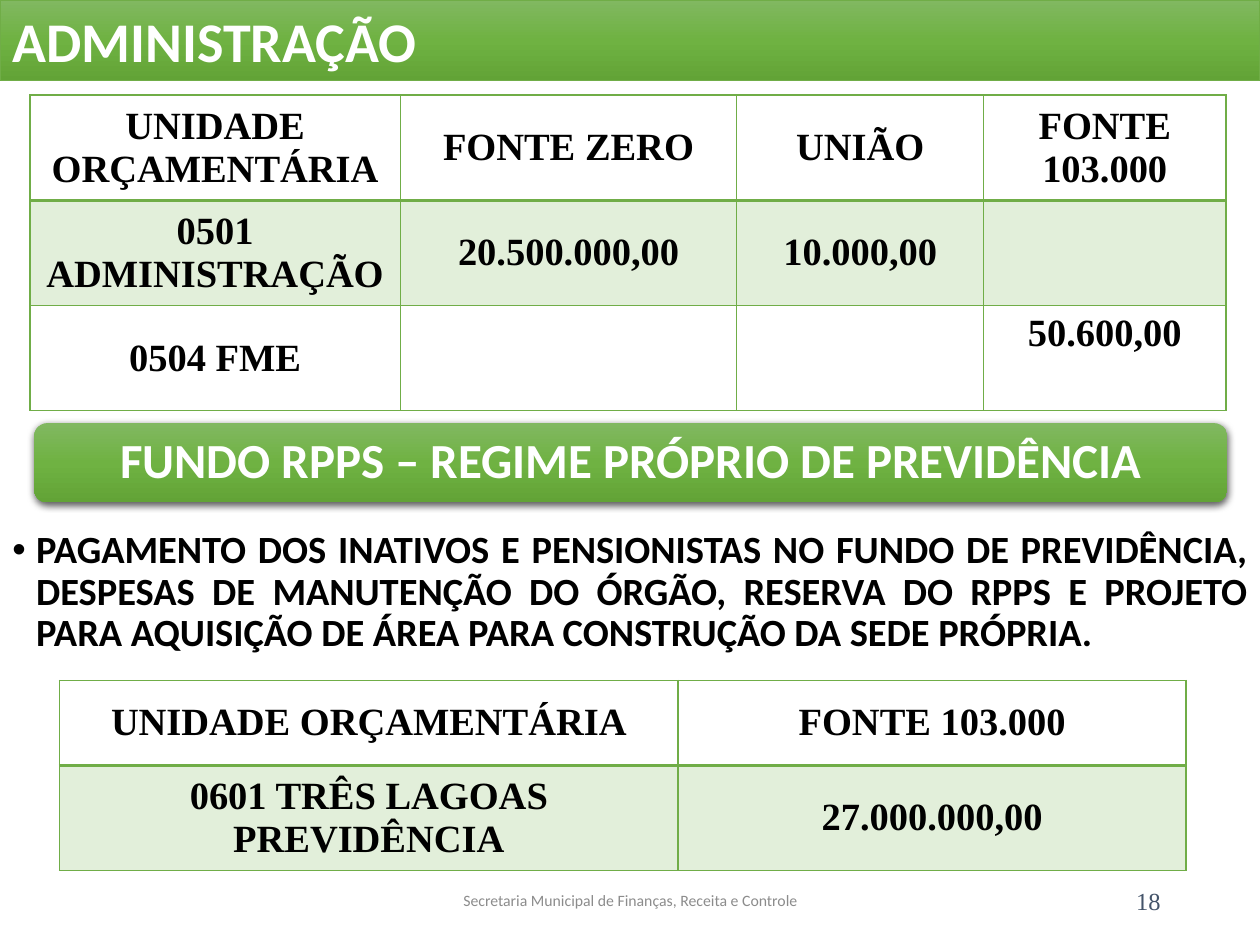
from copy import deepcopy
from dataclasses import dataclass

from lxml.etree import SubElement
from pptx import Presentation
from pptx.dml.color import RGBColor as Rgb
from pptx.enum.shapes import MSO_SHAPE as Kind
from pptx.enum.text import MSO_ANCHOR as Anchor, PP_ALIGN as Align
from pptx.oxml import parse_xml
from pptx.oxml.ns import nsdecls, qn
from pptx.util import Cm, Pt

HUES = {
    "green": "70AD47", "pale": "E2EFDA", "white": "FFFFFF",
    "black": "000000", "gray": "8C8C8C", "slate": "44546A",
}
FADE = ["81B861", "6FB242", "62A336"]
SANS, SERIF = "Calibri", "Times New Roman"


@dataclass
class Box:
    left: float
    top: float
    width: float
    height: float

    def spots(self) -> list:
        return [Cm(v) for v in (self.left, self.top, self.width, self.height)]


@dataclass
class Style:
    size: float
    hue: str = "black"
    face: str = SANS
    bold: bool = False
    align: Align = Align.CENTER


@dataclass
class Grid:
    left: float
    top: float
    cols: list
    rows: list
    cells: list


def write(frame, text: str, style: Style):
    frame.text = text
    para = frame.paragraphs[0]
    para.alignment = style.align
    for run in para.runs:
        font = run.font
        font.size, font.name, font.bold = Pt(style.size), style.face, style.bold
        font.color.rgb = Rgb.from_string(HUES[style.hue])
    return para


def add_text(slide, box: Box, text: str, style: Style, anchor=Anchor.MIDDLE):
    frame = slide.shapes.add_textbox(*box.spots()).text_frame
    frame.word_wrap = True
    frame.vertical_anchor = anchor
    return write(frame, text, style)


def add_bar(slide, kind: Kind, box: Box, text: str, style: Style):
    """Draw a heading bar with a three-stop vertical gradient."""
    bar = slide.shapes.add_shape(kind, *box.spots())
    bar.shadow.inherit = False
    bar.fill.gradient()
    bar.fill.gradient_angle = 270
    stops = bar._element.spPr.find(".//" + qn("a:gsLst"))
    stops.insert(1, deepcopy(stops[0]))
    for i, (stop, hue) in enumerate(zip(bar.fill.gradient_stops, FADE)):
        stop.position = i / 2
        stop.color.rgb = Rgb.from_string(hue)
    bar.text_frame.word_wrap = True
    bar.text_frame.vertical_anchor = Anchor.MIDDLE
    write(bar.text_frame, text, style)
    return bar


def add_glow(shape) -> None:
    """Cast a soft shadow below the shape."""
    effects = shape._element.spPr.find(qn("a:effectLst"))
    cast = SubElement(effects, qn("a:outerShdw"), blurRad=str(Pt(4.5)),
                      dist=str(Pt(1.5)), dir="5400000", rotWithShape="0")
    tint = SubElement(cast, qn("a:srgbClr"), val=HUES["black"])
    SubElement(tint, qn("a:alpha"), val="63000")


def edge(cell, widths: dict) -> None:
    """Set green borders; widths maps L, R, T, B to points."""
    props = cell._tc.get_or_add_tcPr()
    for i, (side, width) in enumerate(widths.items()):
        props.insert(i, parse_xml(
            f'<a:ln{side} {nsdecls("a")} w="{Pt(width)}"><a:solidFill>'
            f'<a:srgbClr val="{HUES["green"]}"/></a:solidFill></a:ln{side}>'))


def add_grid(slide, grid: Grid, style: Style):
    box = Box(grid.left, grid.top, sum(grid.cols), sum(grid.rows))
    table = slide.shapes.add_table(
        len(grid.rows), len(grid.cols), *box.spots()).table
    for col, width in zip(table.columns, grid.cols):
        col.width = Cm(width)
    for r, texts in enumerate(grid.cells):
        table.rows[r].height = Cm(grid.rows[r])
        for c, text in enumerate(texts):
            cell = table.cell(r, c)
            cell.fill.solid()
            hue = HUES["pale" if r == 1 else "white"]
            cell.fill.fore_color.rgb = Rgb.from_string(hue)
            cell.vertical_anchor = Anchor.MIDDLE
            edge(cell, {"L": 1, "R": 1, "T": 2 if r == 1 else 1,
                        "B": 2 if r == 0 else 1})
            if text:
                write(cell.text_frame, text, style)
    return table


def main() -> None:
    deck = Presentation()
    deck.slide_width, deck.slide_height = Cm(25.4), Cm(19.05)
    slide = deck.slides.add_slide(deck.slide_layouts[6])

    title = add_bar(slide, Kind.RECTANGLE, Box(0, 0, 25.4, 1.63),
                    "ADMINISTRAÇÃO",
                    Style(32, "white", bold=True, align=Align.LEFT))
    title.line.color.rgb = Rgb.from_string(HUES["green"])
    title.line.width = Pt(0.5)

    bold = Style(22, face=SERIF, bold=True)
    funds = add_grid(slide, Grid(
        0.6, 1.92, [7.47, 6.78, 4.98, 4.88], [2.12] * 3, [
            ["UNIDADE ORÇAMENTÁRIA", "FONTE ZERO", "UNIÃO", "FONTE 103.000"],
            ["0501 ADMINISTRAÇÃO", "20.500.000,00", "10.000,00", ""],
            ["0504 FME", "", "", "50.600,00"],
        ]), bold)
    funds.cell(2, 3).vertical_anchor = Anchor.TOP

    band = add_bar(slide, Kind.ROUNDED_RECTANGLE, Box(0.69, 8.53, 24.05, 1.6),
                   "FUNDO RPPS – REGIME PRÓPRIO DE PREVIDÊNCIA",
                   Style(28, "white", bold=True))
    band.line.fill.background()
    band.text_frame.paragraphs[0].line_spacing = 0.9
    add_glow(band)

    note = add_text(
        slide, Box(0, 10.57, 25.4, 2.9),
        "PAGAMENTO DOS INATIVOS E PENSIONISTAS NO FUNDO DE PREVIDÊNCIA, "
        "DESPESAS DE MANUTENÇÃO DO ÓRGÃO, RESERVA DO RPPS E PROJETO PARA "
        "AQUISIÇÃO DE ÁREA PARA CONSTRUÇÃO DA SEDE PRÓPRIA.",
        Style(22, bold=True, align=Align.JUSTIFY), Anchor.TOP)
    note.line_spacing = 0.9
    props = note._p.get_or_add_pPr()
    props.set("marL", str(Cm(0.48)))
    props.set("indent", str(-Cm(0.48)))
    SubElement(props, qn("a:buFont"), typeface="Arial")
    SubElement(props, qn("a:buChar"), char="•")

    add_grid(slide, Grid(
        1.2, 13.72, [12.47, 10.24], [1.71, 2.12], [
            ["UNIDADE ORÇAMENTÁRIA", "FONTE 103.000"],
            ["0601 TRÊS LAGOAS PREVIDÊNCIA", "27.000.000,00"],
        ]), bold)

    add_text(slide, Box(8.41, 17.65, 8.59, 1.01),
             "Secretaria Municipal de Finanças, Receita e Controle",
             Style(9, "gray"))
    add_text(slide, Box(17.93, 17.65, 5.72, 1.01), "18",
             Style(14, "slate", SERIF, align=Align.RIGHT))
    deck.save("out.pptx")


if __name__ == "__main__":
    main()
